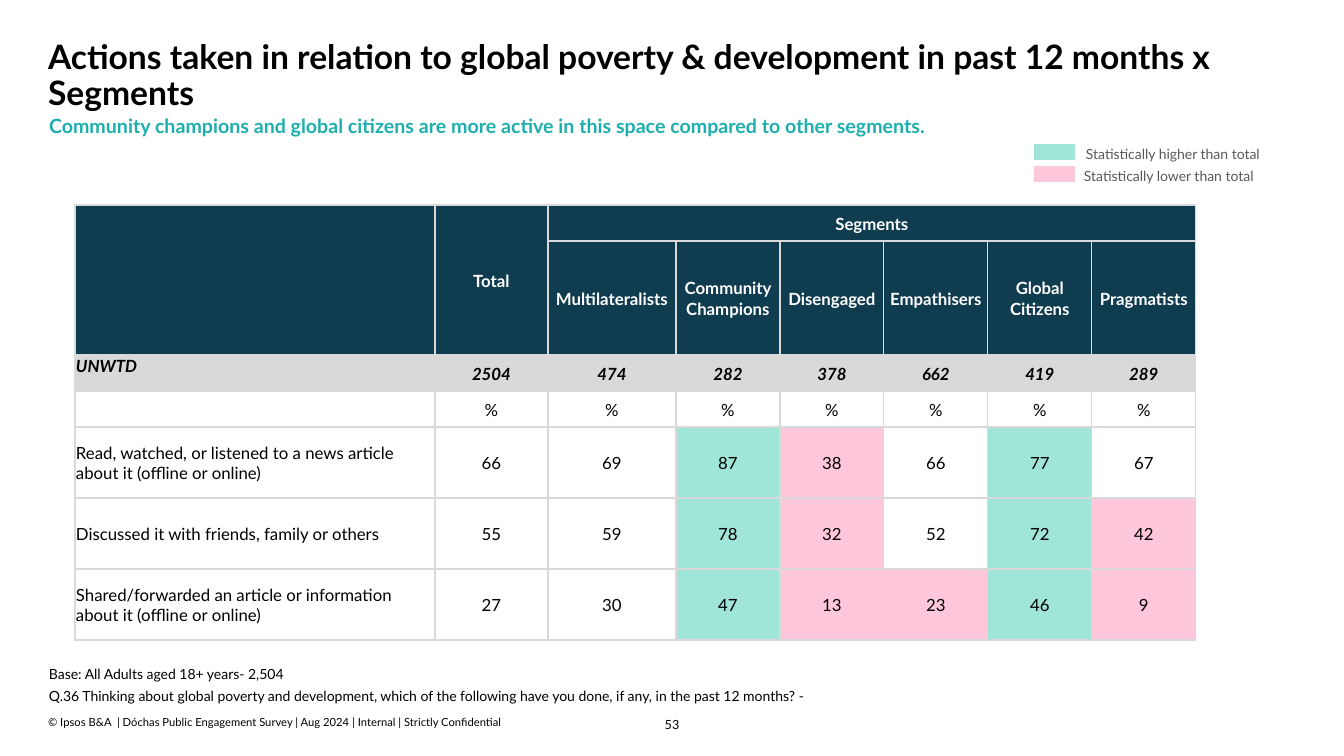
from dataclasses import dataclass

from lxml.etree import SubElement
from pptx import Presentation
from pptx.dml.color import RGBColor
from pptx.enum.shapes import MSO_SHAPE
from pptx.enum.text import MSO_ANCHOR, PP_ALIGN
from pptx.oxml.ns import qn
from pptx.util import Emu, Pt


@dataclass(frozen=True)
class Theme:
    """Colours, font and type sizes of the deck."""
    font: str = "Lato"
    ink: str = "000000"
    paper: str = "FFFFFF"
    accent: str = "1DAFAD"
    header: str = "103C50"
    grey: str = "D9D9D9"
    legend: str = "595959"
    higher: str = "9FE5D8"
    lower: str = "FFC7DC"
    title_size: int = 24
    subtitle_size: int = 14
    table_size: int = 12
    note_size: int = 10
    number_size: int = 9
    footer_size: int = 8


THEME = Theme()
SEGMENTS = ["Multilateralists", "Community Champions", "Disengaged",
            "Empathisers", "Global Citizens", "Pragmatists"]
COUNTS = [2504, 474, 282, 378, 662, 419, 289]
ACTIONS = [
    ("Read, watched, or listened to a news article about it (offline or online)",
     [66, 69, 87, 38, 66, 77, 67], "==+-=+="),
    ("Discussed it with friends, family or others",
     [55, 59, 78, 32, 52, 72, 42], "==+-=+-"),
    ("Shared/forwarded an article or information about it (offline or online)",
     [27, 30, 47, 13, 23, 46, 9], "==+--+-"),
]
FILLS = {"=": THEME.paper, "+": THEME.higher, "-": THEME.lower}
COLUMNS = [360, 113, 128] + [104] * 5
ROWS = [36, 114, 36, 36] + [71] * 3


def px(length):
    """Turn pixels into EMU."""
    return Emu(round(length * 914400 / 100.8))


def add_span(para, text, size, color, bold=False, italic=False):
    """Add one styled run to a paragraph."""
    span = para.add_run()
    span.text = text
    font = span.font
    font.name, font.size = THEME.font, Pt(size)
    font.bold, font.italic = bold, italic
    font.color.rgb = RGBColor.from_string(color)


def add_text(page, box, lines, size, color, bold=False, spacing=1.0, after=0,
             align=PP_ALIGN.LEFT, anchor=MSO_ANCHOR.TOP, margins=(0, 0, 0, 0)):
    """Place a text box with one paragraph for each line."""
    frame = page.shapes.add_textbox(*map(px, box)).text_frame
    frame.word_wrap = True
    frame.vertical_anchor = anchor
    (frame.margin_left, frame.margin_top,
     frame.margin_right, frame.margin_bottom) = map(px, margins)
    for index, line in enumerate(lines):
        para = frame.add_paragraph() if index else frame.paragraphs[0]
        para.alignment, para.line_spacing = align, spacing
        para.space_after = Pt(after)
        add_span(para, line, size, color, bold)


def add_heading(page, box):
    """Place the title with the subtitle under it."""
    left, top, width, height = box
    add_text(page, (left, top, width, 79),
             ["Actions taken in relation to global poverty & development "
              "in past 12 months x Segments"],
             THEME.title_size, THEME.ink, bold=True, spacing=0.9,
             margins=(0, 5, 10, 5))
    add_text(page, (left + 1, top + 82, width, height - 82),
             ["Community champions and global citizens are more active "
              "in this space compared to other segments."],
             THEME.subtitle_size, THEME.accent, bold=True, spacing=0.9)


def add_legend(page, box):
    """Place the two colour keys and their labels."""
    left, top, width, height = box
    step = height // 2
    keys = [("higher", THEME.higher, 43), ("lower", THEME.lower, 41)]
    for index, (word, color, indent) in enumerate(keys):
        row_top = top + index * step
        swatch = page.shapes.add_shape(
            MSO_SHAPE.RECTANGLE, *map(px, (left, row_top + 2, 43, 18)))
        swatch.shadow.inherit = False
        swatch.fill.solid()
        swatch.fill.fore_color.rgb = RGBColor.from_string(color)
        swatch.line.color.rgb = RGBColor.from_string(THEME.paper)
        swatch.line.width = Pt(1)
        add_text(page, (left + indent, row_top, width - indent, 27),
                 [f"Statistically {word} than total"],
                 THEME.note_size, THEME.legend, margins=(10, 5, 10, 5))


def add_borders(cell):
    """Draw a thin grey line on each side of a cell."""
    properties = cell._tc.get_or_add_tcPr()
    for side in ("lnL", "lnR", "lnT", "lnB"):
        line = SubElement(properties, qn(f"a:{side}"), w=str(Pt(1)))
        fill = SubElement(line, qn("a:solidFill"))
        SubElement(fill, qn("a:srgbClr"), val=THEME.grey)


def fill_cell(cell, text, fill, color=THEME.ink, bold=False, italic=False,
              align=PP_ALIGN.CENTER, anchor=MSO_ANCHOR.MIDDLE):
    """Set the text, fill and borders of a cell."""
    add_borders(cell)
    cell.fill.solid()
    cell.fill.fore_color.rgb = RGBColor.from_string(fill)
    cell.margin_left = cell.margin_right = cell.margin_top = px(1)
    cell.margin_bottom = 0
    cell.vertical_anchor = anchor
    para = cell.text_frame.paragraphs[0]
    para.alignment = align
    if text:
        add_span(para, text, THEME.table_size, color, bold, italic)


def add_results(page, box):
    """Place the table of actions by segment."""
    table = page.shapes.add_table(len(ROWS), len(COLUMNS), *map(px, box)).table
    table.first_row = table.horz_banding = False
    for column, width in zip(table.columns, COLUMNS):
        column.width = px(width)
    for row, height in zip(table.rows, ROWS):
        row.height = px(height)

    headers = [["", "Total", "Segments"] + [""] * 5, ["", ""] + SEGMENTS]
    for row, labels in enumerate(headers):
        for column, label in enumerate(labels):
            fill_cell(table.cell(row, column), label, THEME.header,
                      THEME.paper, bold=True)
    for column in (0, 1):
        table.cell(0, column).merge(table.cell(1, column))
    table.cell(0, 2).merge(table.cell(0, len(COLUMNS) - 1))

    fill_cell(table.cell(2, 0), "UNWTD", THEME.grey, bold=True, italic=True,
              align=PP_ALIGN.LEFT, anchor=MSO_ANCHOR.TOP)
    fill_cell(table.cell(3, 0), "", THEME.paper)
    for column, count in enumerate(COUNTS, 1):
        fill_cell(table.cell(2, column), str(count), THEME.grey,
                  bold=True, italic=True)
        fill_cell(table.cell(3, column), "%", THEME.paper)

    for row, (action, shares, marks) in enumerate(ACTIONS, 4):
        fill_cell(table.cell(row, 0), action, THEME.paper, align=PP_ALIGN.LEFT)
        for column, (share, mark) in enumerate(zip(shares, marks), 1):
            fill_cell(table.cell(row, column), str(share), FILLS[mark])


def add_footer(page, box):
    """Place the base notes, the copyright line and the page number."""
    left, top, width, height = box
    add_text(page, (left + 1, top, 1030, 36),
             ["Base: All Adults aged 18+ years- 2,504",
              "Q.36 Thinking about global poverty and development, which of the "
              "following have you done, if any, in the past 12 months? -"],
             THEME.note_size, THEME.ink, spacing=1.15, after=2)
    add_text(page, (left, top + height - 14, 615, 13),
             ["© Ipsos B&A  | Dóchas Public Engagement Survey | Aug 2024 "
              "| Internal | Strictly Confidential"],
             THEME.footer_size, THEME.ink, anchor=MSO_ANCHOR.BOTTOM)
    add_text(page, (left + (width - 54) // 2, top + height - 15, 54, 15), ["53"],
             THEME.number_size, THEME.ink, spacing=1.1, after=4,
             align=PP_ALIGN.CENTER)


def main():
    """Build the slide and save the deck."""
    deck = Presentation()
    deck.slide_width, deck.slide_height = px(1344), px(756)
    page = deck.slides.add_slide(deck.slide_layouts[6])
    add_heading(page, (48, 35, 1244, 109))
    add_results(page, (75, 205, sum(COLUMNS), sum(ROWS)))
    add_legend(page, (1033, 141, 260, 45))
    add_footer(page, (48, 663, 1248, 67))
    deck.save("out.pptx")


if __name__ == "__main__":
    main()
